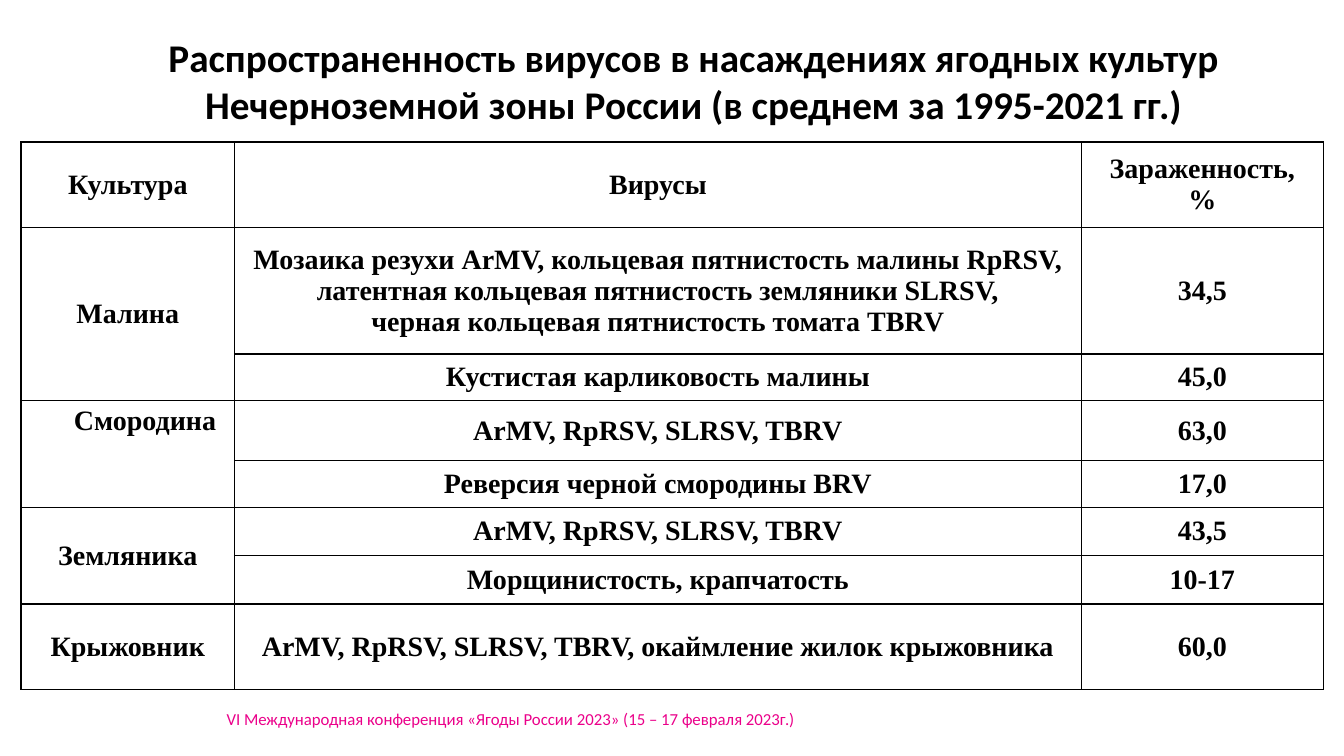
from lxml.etree import SubElement
from pptx import Presentation
from pptx.dml.color import RGBColor
from pptx.enum.text import MSO_ANCHOR, MSO_AUTO_SIZE, PP_ALIGN
from pptx.oxml.ns import qn
from pptx.util import Cm, Pt

BLACK = RGBColor(0x00, 0x00, 0x00)
WHITE = RGBColor(0xFF, 0xFF, 0xFF)
MAGENTA = RGBColor(0xEB, 0x00, 0x8A)

TITLE = ("Распространенность вирусов в насаждениях ягодных культур "
         "Нечерноземной зоны России (в среднем за 1995-2021 гг.)")
FOOTER = "VI Международная конференция «Ягоды России 2023» (15 – 17 февраля 2023г.)"
COMMON_VIRUSES = "ArMV, RpRSV, SLRSV, TBRV"
RASPBERRY_VIRUSES = (
    "Мозаика резухи ArMV, кольцевая пятнистость малины RpRSV, "
    "латентная кольцевая пятнистость земляники SLRSV,\n"
    "черная кольцевая пятнистость томата TBRV")

HEADER = ("Культура", "Вирусы", "Зараженность, %")
CROPS = [
    ("Малина", [(RASPBERRY_VIRUSES, "34,5"), ("Кустистая карликовость малины", "45,0")]),
    ("Смородина", [(COMMON_VIRUSES, "63,0"), ("Реверсия черной смородины BRV", "17,0")]),
    ("Земляника", [(COMMON_VIRUSES, "43,5"), ("Морщинистость, крапчатость", "10-17")]),
    ("Крыжовник", [(f"{COMMON_VIRUSES}, окаймление жилок крыжовника", "60,0")]),
]
COLUMN_WIDTHS = (5.38, 21.34, 6.1)
ROW_HEIGHTS = (2.16, 3.18, 1.17, 1.52, 1.17, 1.22, 1.22, 2.16)


def format_text(frame, font_name, size, color, bold, align):
    for para in frame.paragraphs:
        para.alignment = align
        for span in para.runs:
            span.font.name = font_name
            span.font.size = Pt(size)
            span.font.bold = bold
            span.font.color.rgb = color


def add_borders(cell):
    properties = cell._tc.get_or_add_tcPr()
    for side in ("lnL", "lnR", "lnT", "lnB"):
        line = SubElement(properties, qn(f"a:{side}"), w=str(Pt(1)))
        fill = SubElement(line, qn("a:solidFill"))
        SubElement(fill, qn("a:srgbClr"), val=str(BLACK))


def format_cell(cell):
    add_borders(cell)
    cell.fill.solid()
    cell.fill.fore_color.rgb = WHITE
    cell.vertical_anchor = MSO_ANCHOR.MIDDLE
    cell.margin_left = cell.margin_right = Cm(0.33)
    cell.margin_top = cell.margin_bottom = Cm(0.13)
    format_text(cell.text_frame, "Times New Roman", 20, BLACK, True, PP_ALIGN.CENTER)


def place_title(page, left, top, width, height):
    title = page.shapes.title
    title.left, title.top, title.width, title.height = map(Cm, (left, top, width, height))
    frame = title.text_frame
    frame.text = TITLE
    frame.word_wrap = True
    frame.auto_size = MSO_AUTO_SIZE.NONE
    frame.vertical_anchor = MSO_ANCHOR.MIDDLE
    format_text(frame, "Calibri", 28, BLACK, True, PP_ALIGN.CENTER)


def place_table(page, left, top):
    table = page.shapes.add_table(
        len(ROW_HEIGHTS), len(COLUMN_WIDTHS), Cm(left), Cm(top),
        Cm(sum(COLUMN_WIDTHS)), Cm(sum(ROW_HEIGHTS))).table
    table.horz_banding = False
    for column, width in zip(table.columns, COLUMN_WIDTHS):
        column.width = Cm(width)
    for row, height in zip(table.rows, ROW_HEIGHTS):
        row.height = Cm(height)

    for index, heading in enumerate(HEADER):
        table.cell(0, index).text = heading
    first = 1
    for crop, infections in CROPS:
        table.cell(first, 0).text = crop
        for row_index, (viruses, share) in enumerate(infections, first):
            table.cell(row_index, 1).text = viruses
            table.cell(row_index, 2).text = share
        if len(infections) > 1:
            table.cell(first, 0).merge(table.cell(row_index, 0))
        first += len(infections)

    for cell in table.iter_cells():
        format_cell(cell)
    currant = table.cell(3, 0)
    currant.vertical_anchor = MSO_ANCHOR.TOP
    currant.margin_left = Cm(1.2)


def place_footer(page, left, top, width, height):
    box = page.shapes.add_textbox(Cm(left), Cm(top), Cm(width), Cm(height))
    frame = box.text_frame
    frame.text = FOOTER
    frame.word_wrap = True
    format_text(frame, "Calibri", 12, MAGENTA, False, PP_ALIGN.LEFT)


def main():
    deck = Presentation()
    deck.slide_width = Cm(33.87)
    deck.slide_height = Cm(19.05)
    page = deck.slides.add_slide(deck.slide_layouts[5])
    place_footer(page, 5.46, 17.73, 16.94, 0.76)
    place_title(page, 3.07, 0.71, 28.8, 2.64)
    place_table(page, 0.53, 3.58)
    deck.save("out.pptx")


if __name__ == "__main__":
    main()
